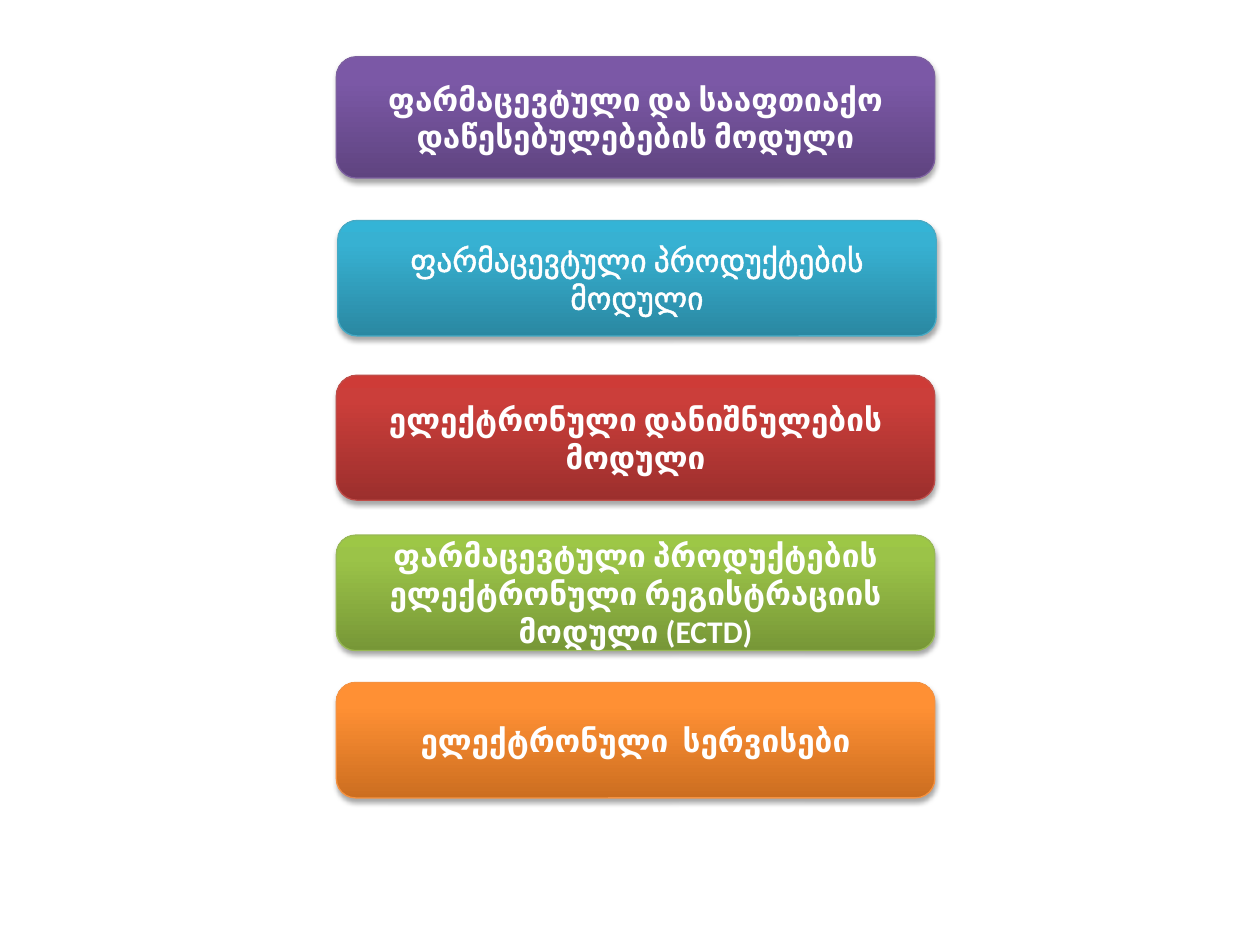
"""Build a slide with a column of five glossy module boxes."""
import copy

from lxml import etree
from pptx import Presentation
from pptx import util as u
from pptx.dml.color import RGBColor
from pptx.enum import shapes, text
from pptx.oxml import ns

WHITE = RGBColor(0xFF, 0xFF, 0xFF)
PURPLE = [RGBColor.from_string(c) for c in ("5F4480", "7B58A6", "7C57A8", "7D60A0")]
BLUE = [RGBColor.from_string(c) for c in ("2A88A2", "37B1D2", "34B4D6", "46AAC5")]
RED = [RGBColor.from_string(c) for c in ("9C2F2D", "CB3E3A", "CE3B37", "BF4C48")]
GREEN = [RGBColor.from_string(c) for c in ("779737", "9BC348", "9DC746", "98B955")]
ORANGE = [RGBColor.from_string(c) for c in ("CC6E20", "FF9034", "FF9136", "F69240")]

LEFT, WIDTH = 192.2, 342
STOPS = (0, 0.8, 1)
BOLD = {"name": "Calibri", "size": u.Pt(18), "bold": True}
REGULAR = {**BOLD, "bold": False}

MODULES = [
    ("ფარმაცევტული და სააფთიაქო დაწესებულებების მოდული", LEFT, 32.4, 69.4, PURPLE, BOLD),
    ("ელექტრონული დანიშნულების მოდული", LEFT, 214.4, 71.4, RED, BOLD),
    ("ფარმაცევტული პროდუქტების ელექტრონული რეგისტრაციის მოდული (ECTD)",
     LEFT, 305.8, 66, GREEN, BOLD),
    ("ელექტრონული  სერვისები", LEFT, 390, 66, ORANGE, BOLD),
    ("ფარმაცევტული პროდუქტების მოდული", LEFT + 0.8, 126, 66, BLUE, REGULAR),
]


def add_xml(parent, tag, index=None, **attributes):
    child = etree.Element(ns.qn(tag), {key: str(value) for key, value in attributes.items()})
    parent.insert(len(parent) if index is None else index, child)
    return child


class SlideBuilder:
    def __init__(self, slide, font_color):
        self.slide = slide
        self.font_color = font_color

    def module_box(self, label, left, top, height, palette, font_format):
        shape = self.slide.shapes.add_shape(
            shapes.MSO_SHAPE.ROUNDED_RECTANGLE,
            u.Pt(left), u.Pt(top), u.Pt(WIDTH), u.Pt(height))
        self.gradient(shape, palette[:3])
        shape.line.color.rgb = palette[3]
        shape.line.width = u.Pt(0.75)
        self.shadow(shape)
        self.label(shape, label, font_format)

    def gradient(self, shape, colors):
        shape.fill.gradient()
        shape.fill.gradient_angle = 90
        stop_list = shape.element.spPr.find(ns.qn("a:gradFill")).find(ns.qn("a:gsLst"))
        stop_list.append(copy.deepcopy(stop_list[-1]))
        for stop, position, color in zip(shape.fill.gradient_stops, STOPS, colors):
            stop.position = position
            stop.color.rgb = color

    def shadow(self, shape):
        shape.shadow.inherit = False
        effects = shape.element.spPr.find(ns.qn("a:effectLst"))
        outer = add_xml(effects, "a:outerShdw", blurRad=u.Pt(3.1), dist=u.Pt(1.8),
                        dir=5400000, rotWithShape=0)
        color = add_xml(outer, "a:srgbClr", val="000000")
        add_xml(color, "a:alpha", val=35000)

    def label(self, shape, label, font_format):
        frame = shape.text_frame
        frame.word_wrap = True
        frame.vertical_anchor = text.MSO_ANCHOR.MIDDLE
        paragraph = frame.paragraphs[0]
        paragraph.alignment = text.PP_ALIGN.CENTER
        run = paragraph.add_run()
        run.text = label
        for name, value in font_format.items():
            setattr(run.font, name, value)
        run.font.color.rgb = self.font_color
        if not font_format["bold"]:
            self.text_outline(run)

    def text_outline(self, run):
        line = add_xml(run.font._element, "a:ln", index=0, w=u.Pt(1.45))
        fill = add_xml(line, "a:solidFill")
        add_xml(fill, "a:srgbClr", val=self.font_color)


def main():
    presentation = Presentation()
    presentation.slide_width, presentation.slide_height = u.Pt(720), u.Pt(540)
    slide = presentation.slides.add_slide(presentation.slide_layouts[6])
    builder = SlideBuilder(slide, WHITE)
    for module in MODULES:
        builder.module_box(*module)
    presentation.save("out.pptx")


if __name__ == "__main__":
    main()
